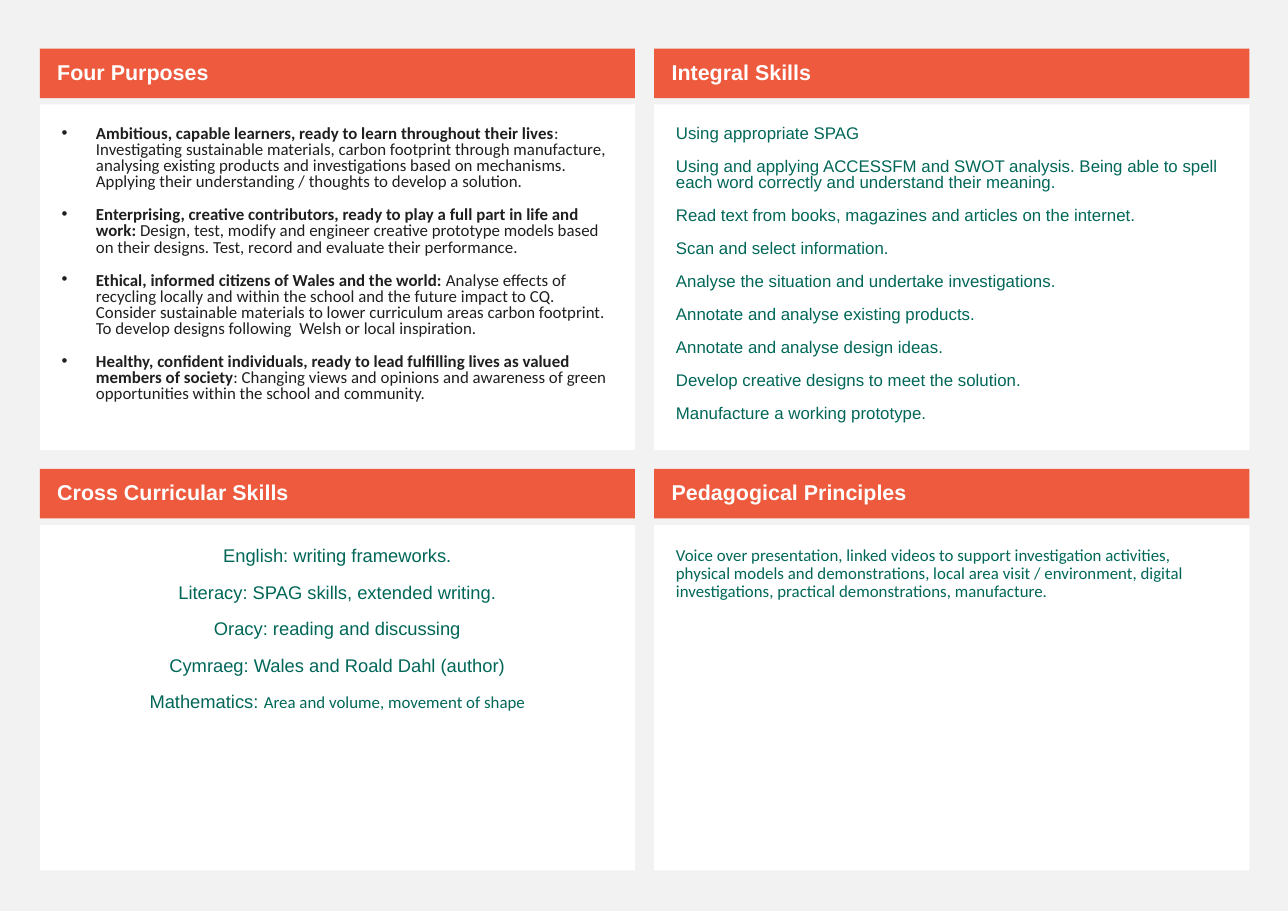
from lxml.etree import SubElement
from pptx import Presentation
from pptx.dml.color import RGBColor
from pptx.enum.shapes import MSO_SHAPE
from pptx.enum.text import MSO_ANCHOR, PP_ALIGN
from pptx.oxml.ns import qn
from pptx.util import Pt

GREY = RGBColor(0xF2, 0xF2, 0xF2)
WHITE = RGBColor(0xFF, 0xFF, 0xFF)
ORANGE = RGBColor(0xED, 0x5A, 0x3E)
GREEN = RGBColor(0x00, 0x67, 0x58)
DARK = RGBColor(0x1F, 0x1F, 0x1F)

LEFT, TOP = 26, 31.8
CARD_W, CARD_H = 389, 262.5
COL_STEP, ROW_STEP = 401.5, 274.7
HEAD_H, HEAD_GAP = 32.3, 4.2

PURPOSES = [
    ("Ambitious, capable learners, ready to learn throughout their lives",
     ": Investigating sustainable materials, carbon footprint through manufacture, "
     "analysing existing products and investigations based on mechanisms. "
     "Applying their understanding / thoughts to develop a solution."),
    ("Enterprising, creative contributors, ready to play a full part in life and work:",
     " Design, test, modify and engineer creative prototype models based on their "
     "designs. Test, record and evaluate their performance."),
    ("Ethical, informed citizens of Wales and the world:",
     " Analyse effects of recycling locally and within the school and the future "
     "impact to CQ. Consider sustainable materials to "
     "lower curriculum areas carbon footprint. To develop designs following "
     " Welsh or local inspiration."),
    ("Healthy, confident individuals, ready to lead fulfilling lives as valued members of society",
     ": Changing views and opinions and awareness of green opportunities within the "
     "school and community."),
]
INTEGRAL = [
    "Using appropriate SPAG",
    "Using and applying ACCESSFM and SWOT analysis. Being able to spell each word "
    "correctly and understand their meaning.",
    "Read text from books, magazines and articles on the internet.",
    "Scan and select information.",
    "Analyse the situation and undertake investigations.",
    "Annotate and analyse existing products.",
    "Annotate and analyse design ideas.",
    "Develop creative designs to meet the solution.",
    "Manufacture a working prototype.",
]
CROSS = [
    "English: writing frameworks.",
    "Literacy: SPAG skills, extended writing.",
    "Oracy: reading and discussing",
    "Cymraeg: Wales and Roald Dahl (author)",
    "Mathematics: ",
]
PEDAGOGY = (
    "Voice over presentation, linked videos to support investigation activities, "
    "physical models and demonstrations, local area visit / environment, digital "
    "investigations, practical demonstrations, manufacture."
)


def add_run(p, text, size=11, font="Arial", color=GREEN, bold=False):
    r = p.add_run()
    r.text = text
    r.font.size = Pt(size)
    r.font.name = font
    r.font.color.rgb = color
    r.font.bold = bold


def add_paragraph(tf, spacing=0.9, align=PP_ALIGN.LEFT):
    first = tf.paragraphs[0]
    p = tf.add_paragraph() if first.runs else first
    p.alignment = align
    p.line_spacing = spacing
    p.space_before = Pt(11)
    return p


def add_bullet(p):
    pPr = p._p.get_or_add_pPr()
    pPr.set("marL", str(Pt(22.5)))
    pPr.set("indent", str(-Pt(22.5)))
    SubElement(pPr, qn("a:buFont")).set("typeface", "Arial")
    SubElement(pPr, qn("a:buChar")).set("char", "•")


def add_box(s, x, y, w, h, fill, margins, anchor):
    sp = s.shapes.add_shape(MSO_SHAPE.RECTANGLE, Pt(x), Pt(y), Pt(w), Pt(h))
    sp.shadow.inherit = False
    sp.fill.solid()
    sp.fill.fore_color.rgb = fill
    sp.line.fill.background()
    tf = sp.text_frame
    tf.word_wrap = True
    tf.vertical_anchor = anchor
    tf.margin_left, tf.margin_top, tf.margin_right, tf.margin_bottom = map(Pt, margins)
    return tf


def add_card(s, x, y, w, h, title):
    head = add_box(s, x, y, w, HEAD_H, ORANGE, (11.4, 3.6, 7.2, 3.6), MSO_ANCHOR.MIDDLE)
    add_run(add_paragraph(head), title, size=14, color=WHITE, bold=True)
    offset = HEAD_H + HEAD_GAP
    return add_box(s, x, y + offset, w, h - offset, WHITE, (14.2,) * 4, MSO_ANCHOR.TOP)


def four_purposes(s, *box):
    tf = add_card(s, *box, "Four Purposes")
    for purpose, detail in PURPOSES:
        p = add_paragraph(tf, spacing=0.8)
        add_bullet(p)
        add_run(p, purpose, font="Calibri", color=DARK, bold=True)
        add_run(p, detail, font="Calibri", color=DARK)


def integral_skills(s, *box):
    tf = add_card(s, *box, "Integral Skills")
    for skill in INTEGRAL:
        add_run(add_paragraph(tf, spacing=0.8), skill)


def cross_curricular(s, *box):
    tf = add_card(s, *box, "Cross Curricular Skills")
    for skill in CROSS:
        p = add_paragraph(tf, align=PP_ALIGN.CENTER)
        add_run(p, skill, size=12)
    add_run(p, "Area and volume, movement of shape", font="Calibri")


def pedagogical_principles(s, *box):
    tf = add_card(s, *box, "Pedagogical Principles")
    add_run(add_paragraph(tf), PEDAGOGY, font="Calibri")


def main():
    prs = Presentation()
    prs.slide_width, prs.slide_height = Pt(841.68), Pt(595.44)
    s = prs.slides.add_slide(prs.slide_layouts[6])
    s.background.fill.solid()
    s.background.fill.fore_color.rgb = GREY
    cards = [four_purposes, integral_skills, cross_curricular, pedagogical_principles]
    for i, card in enumerate(cards):
        row, col = divmod(i, 2)
        card(s, LEFT + col * COL_STEP, TOP + row * ROW_STEP, CARD_W, CARD_H)
    prs.save("out.pptx")


if __name__ == "__main__":
    main()
